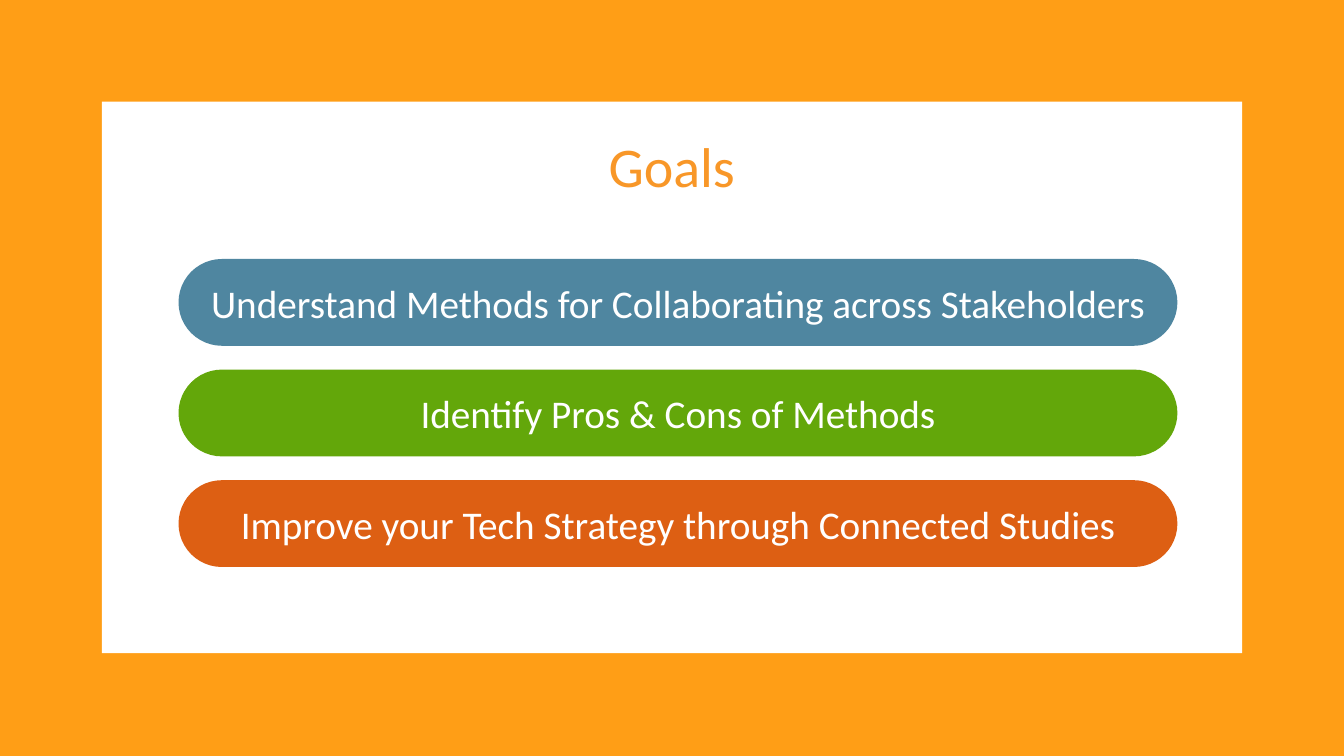
from pptx import Presentation
from pptx.dml.color import RGBColor
from pptx.enum.shapes import MSO_SHAPE
from pptx.enum.text import MSO_ANCHOR, PP_ALIGN
from pptx.util import Pt

ORANGE = RGBColor(0xFF, 0x9E, 0x16)
TITLE_ORANGE = RGBColor(0xF8, 0x97, 0x28)
WHITE = RGBColor(0xFF, 0xFF, 0xFF)
BLUE = RGBColor(0x4F, 0x86, 0xA0)
GREEN = RGBColor(0x63, 0xA7, 0x0A)
RUST = RGBColor(0xDD, 0x5F, 0x13)

prs = Presentation()
prs.slide_width, prs.slide_height = Pt(960), Pt(540)
s = prs.slides.add_slide(prs.slide_layouts[6])


def add_block(kind, left, top, width, height, color):
    sp = s.shapes.add_shape(kind, Pt(left), Pt(top), Pt(width), Pt(height))
    sp.shadow.inherit = False
    sp.fill.solid()
    sp.fill.fore_color.rgb = color
    sp.line.fill.background()
    return sp


def write(sp, text, size, color):
    tf = sp.text_frame
    tf.word_wrap = True
    p = tf.paragraphs[0]
    p.alignment = PP_ALIGN.CENTER
    r = p.add_run()
    r.text = text
    for name, value in {"name": "Calibri", "size": Pt(size)}.items():
        setattr(r.font, name, value)
    r.font.color.rgb = color


add_block(MSO_SHAPE.RECTANGLE, 0, 0, 960, 540, ORANGE)
add_block(MSO_SHAPE.RECTANGLE, 72.7, 72.5, 814.5, 394, WHITE)

title = s.shapes.add_textbox(Pt(118.8), Pt(90.7), Pt(722), Pt(55.4))
write(title, "Goals", 40, TITLE_ORANGE)

goals = [
    ("Understand Methods for Collaborating across Stakeholders", BLUE),
    ("Identify Pros & Cons of Methods", GREEN),
    ("Improve your Tech Strategy through Connected Studies", RUST),
]
for i, (text, color) in enumerate(goals):
    pill = add_block(MSO_SHAPE.ROUNDED_RECTANGLE, 127.5, 185 + 79 * i, 713.5, 62, color)
    pill.adjustments[0] = 0.5
    pill.text_frame.vertical_anchor = MSO_ANCHOR.MIDDLE
    write(pill, text, 28, WHITE)

prs.save("out.pptx")
